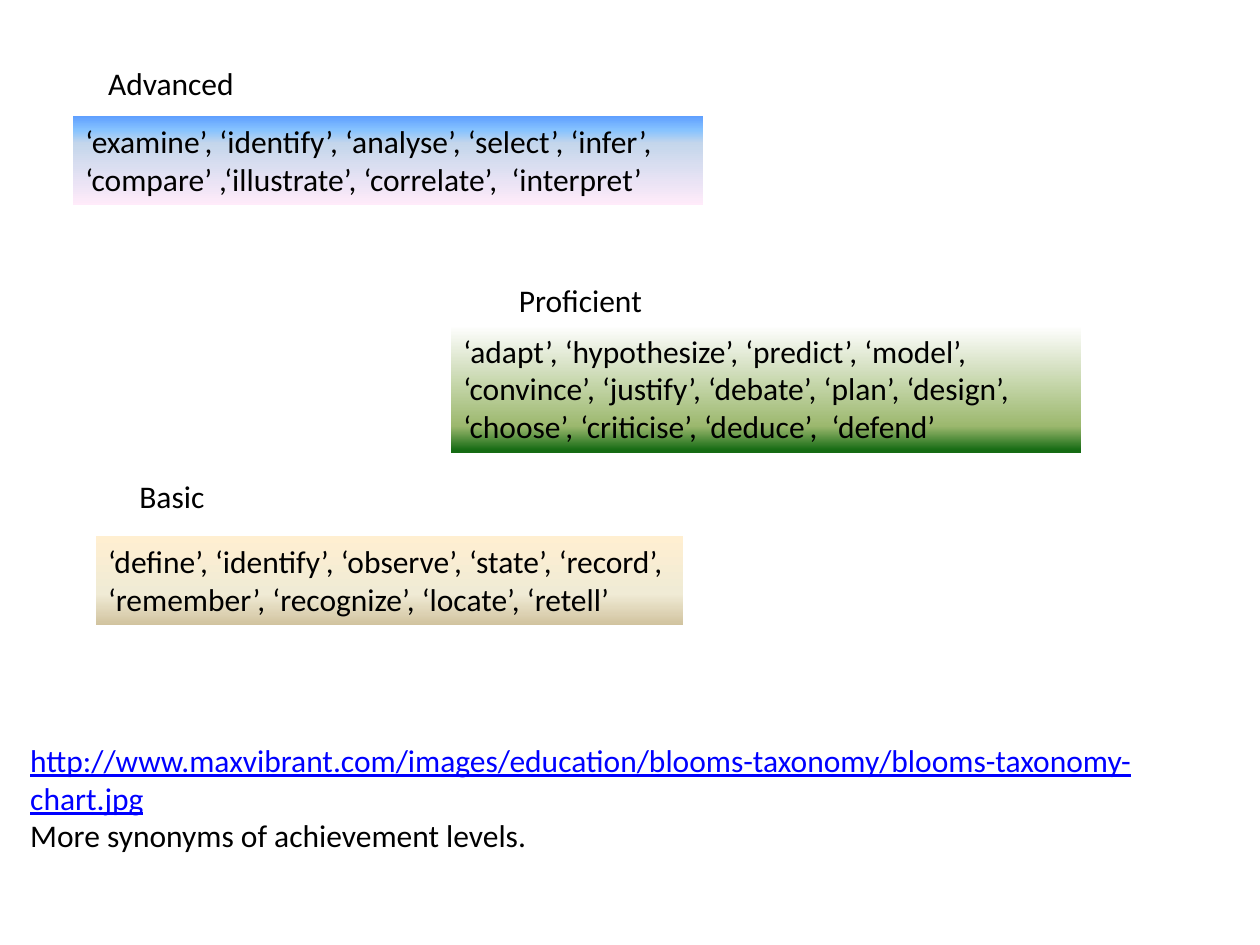
from lxml import etree
from pptx import Presentation
from pptx import util as u
from pptx.dml.color import RGBColor
from pptx.enum import shapes, text
from pptx.oxml.ns import qn

LEVELS = [
    {
        "name": "Advanced", "name_at": (1.93, 1.17, 3.07, 1.02),
        "verbs": ["‘examine’, ‘identify’, ‘analyse’, ‘select’, ‘infer’, "
                  "‘compare’ ,‘illustrate’, ‘correlate’,  ‘interpret’"],
        "verbs_at": (1.47, 2.33, 12.7, 1.8), "wrap": True,
        "stops": [(0, "5E9EFF"), (16, "85C2FF"), (31, "C4D6EB"), (100, "FFEBFA")],
    },
    {
        "name": "Proficient", "name_at": (10.21, 5.54, 3.02, 1.02),
        "verbs": ["‘adapt’, ‘hypothesize’, ‘predict’, ‘model’, ‘convince’, "
                  "‘justify’, ‘debate’, ‘plan’, ‘design’, ‘choose’, "
                  "‘criticise’, ‘deduce’,  ‘defend’"],
        "verbs_at": (9.09, 6.56, 12.7, 2.57), "wrap": True,
        "stops": [(0, "FFFFFF"), (79, "9CB86E"), (98, "156B13")],
    },
    {
        "name": "Basic", "name_at": (2.56, 9.5, 1.83, 1.02),
        "verbs": ["‘define’, ‘identify’, ‘observe’, ‘state’, ‘record’,",
                  "‘remember’, ‘recognize’, ‘locate’, ‘retell’"],
        "verbs_at": (1.93, 10.8, 11.84, 1.8), "wrap": False,
        "stops": [(0, "FFEFD1"), (65, "F0EBD5"), (100, "D1C39F")],
    },
]
SOURCE_LINK = "http://www.maxvibrant.com/images/education/blooms-taxonomy/blooms-taxonomy-chart.jpg"
SOURCE_NOTE = "More synonyms of achievement levels."
SOURCE_AT = (0.36, 14.81, 24.97, 2.57)


def set_color(font, value):
    font.color.rgb = RGBColor.from_string(value)


def write(shape, content, wrap=True, color="000000", size=18):
    frame = shape.text_frame
    frame.word_wrap = wrap
    frame.vertical_anchor = text.MSO_ANCHOR.TOP
    frame.text = "\n".join(content)
    for paragraph in frame.paragraphs:
        paragraph.alignment = text.PP_ALIGN.LEFT
        for run in paragraph.runs:
            run.font.name = "Calibri"
            run.font.size = u.Pt(size)
            set_color(run.font, color)


def fill_downward(shape, stops):
    gradient = etree.Element(qn("a:gradFill"), rotWithShape="1")
    stop_list = etree.SubElement(gradient, qn("a:gsLst"))
    for position, color in stops:
        stop = etree.SubElement(stop_list, qn("a:gs"), pos=str(position * 1000))
        etree.SubElement(stop, qn("a:srgbClr"), val=color)
    etree.SubElement(gradient, qn("a:lin"), ang="5400000", scaled="0")
    shape._element.spPr.find(qn("a:prstGeom")).addnext(gradient)


def add_label(slide, place, content, **style):
    box = slide.shapes.add_textbox(*map(u.Cm, place))
    write(box, content, **style)
    return box


def add_level(slide, level):
    panel = slide.shapes.add_shape(
        shapes.MSO_SHAPE.RECTANGLE, *map(u.Cm, level["verbs_at"]))
    panel.shadow.inherit = False
    panel.line.fill.background()
    fill_downward(panel, level["stops"])
    write(panel, level["verbs"], wrap=level["wrap"])
    add_label(slide, level["name_at"], [level["name"]], wrap=False)


def main():
    presentation = Presentation()
    presentation.slide_width = u.Cm(25.4)
    presentation.slide_height = u.Cm(19.05)
    slide = presentation.slides.add_slide(presentation.slide_layouts[6])
    source = add_label(slide, SOURCE_AT, [SOURCE_LINK, SOURCE_NOTE])
    link_font = source.text_frame.paragraphs[0].runs[0].font
    link_font.underline = True
    set_color(link_font, "0000FF")
    for level in LEVELS:
        add_level(slide, level)
    presentation.save("out.pptx")


if __name__ == "__main__":
    main()
